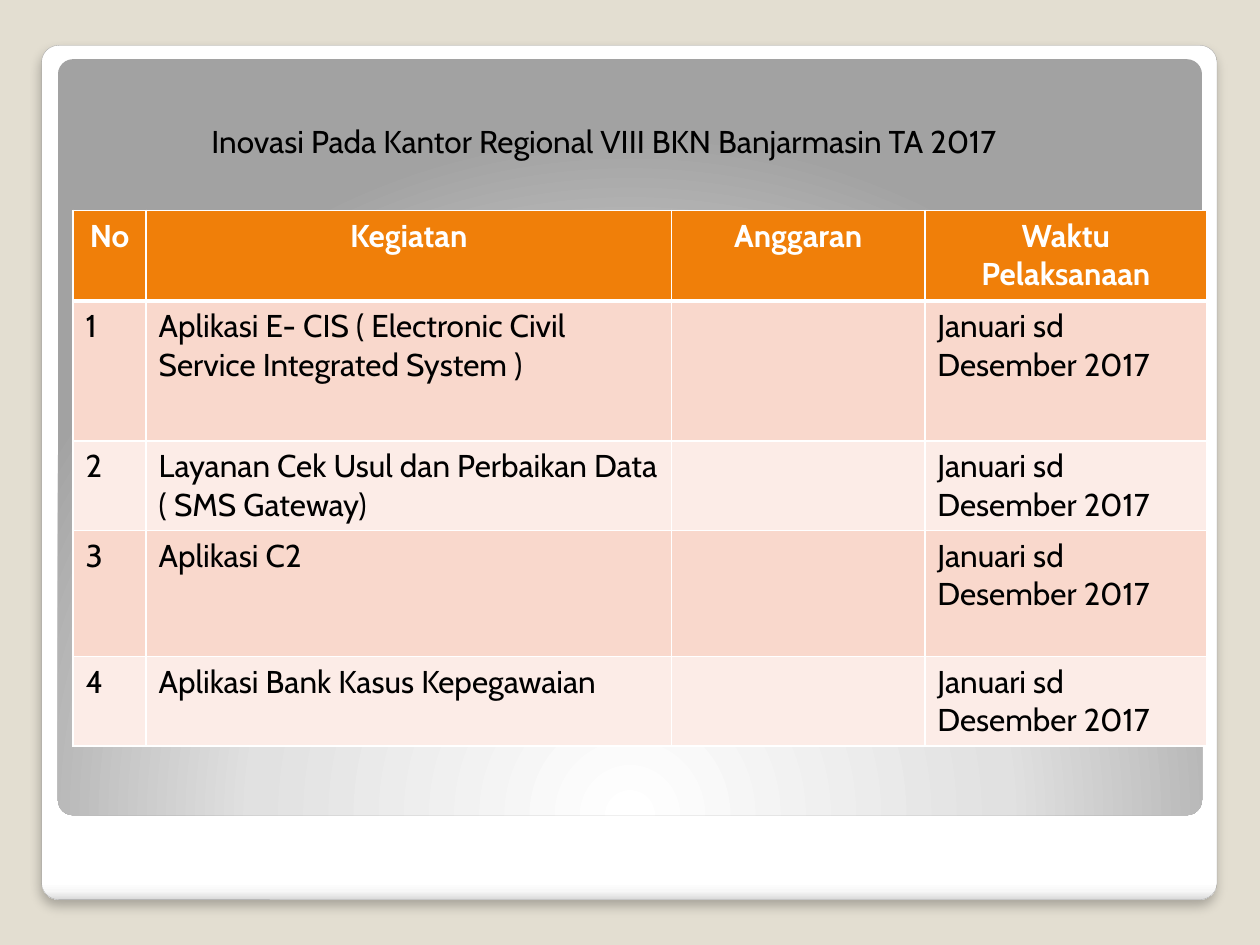
from lxml import etree
from pptx import Presentation
from pptx.dml.color import RGBColor
from pptx.enum.shapes import MSO_SHAPE
from pptx.enum.text import PP_ALIGN
from pptx.oxml import parse_xml
from pptx.oxml.ns import nsdecls, qn
from pptx.util import Inches, Pt

ROUNDED = MSO_SHAPE.ROUNDED_RECTANGLE
CENTER, LEFT = PP_ALIGN.CENTER, PP_ALIGN.LEFT

BACKDROP = RGBColor(0xE3, 0xDE, 0xD1)
FRAME_LINE = RGBColor(0xA4, 0xA4, 0xA4)
ORANGE = RGBColor(0xF0, 0x7F, 0x09)
BANDS = RGBColor(0xF9, 0xD8, 0xCC), RGBColor(0xFC, 0xEC, 0xE7)
WHITE = RGBColor(0xFF, 0xFF, 0xFF)
BLACK = RGBColor(0, 0, 0)
FONT = "Cabin"
TEXT_SIZE = Pt(18)

FRAME_STOPS = [(0, "FFFFFF"), (98, "FFFFFF"), (99, "F7F7F7"), (100, "DADADA")]
FRAME_SHADE = '<a:lin ang="5400000" scaled="0"/>'
PANEL_STOPS = [(0, "FFFFFF"), (55, "E1E1E1"), (100, "A2A2A2")]
PANEL_SHADE = ('<a:path path="circle">'
               '<a:fillToRect l="50000" t="175000" r="50000" b="-75000"/></a:path>')

HEADINGS = ["No", "Kegiatan", "Anggaran", "Waktu Pelaksanaan"]
ACTIVITIES = [
    "Aplikasi E- CIS ( Electronic Civil Service Integrated System )",
    "Layanan Cek Usul dan Perbaikan Data ( SMS Gateway)",
    "Aplikasi C2",
    "Aplikasi Bank Kasus Kepegawaian",
]
PERIOD = "Januari sd Desember 2017"
COLUMN_WIDTHS = [0.58, 4.17, 2.01, 2.24]
ROW_HEIGHTS = [0.72, 1.11, 0.71, 1.0, 0.71]


def style_text(paragraph, color, bold=False, align=LEFT):
    paragraph.alignment = align
    font = paragraph.font
    font.name, font.size, font.bold = FONT, TEXT_SIZE, bold
    font.color.rgb = color


def add_rounded_panel(slide, box, stops, shade):
    panel = slide.shapes.add_shape(ROUNDED, *map(Inches, box))
    panel.adjustments[0] = 0.02
    panel.shadow.inherit = False
    panel.line.fill.background()
    stop_xml = "".join(
        f'<a:gs pos="{position * 1000}"><a:srgbClr val="{color}"/></a:gs>'
        for position, color in stops)
    gradient = parse_xml(f'<a:gradFill {nsdecls("a")} rotWithShape="1">'
                         f'<a:gsLst>{stop_xml}</a:gsLst>{shade}</a:gradFill>')
    panel._element.spPr.find(qn("a:prstGeom")).addnext(gradient)
    return panel


def add_frame(slide, box):
    frame = add_rounded_panel(slide, box, FRAME_STOPS, FRAME_SHADE)
    frame.line.color.rgb = FRAME_LINE
    frame.line.width = Pt(0.16)
    # Soft shadow below the frame
    effects = frame._element.spPr.find(qn("a:effectLst"))
    effects.append(parse_xml(
        f'<a:outerShdw {nsdecls("a")} blurRad="{Pt(6)}" dist="{Pt(4)}" '
        'dir="5400000" algn="tl" rotWithShape="0">'
        '<a:srgbClr val="000000"><a:alpha val="25000"/></a:srgbClr></a:outerShdw>'))


def add_title(slide, box):
    title = slide.shapes.add_textbox(*map(Inches, box)).text_frame
    title.word_wrap = True
    title.text = "Inovasi Pada Kantor Regional VIII BKN Banjarmasin TA 2017"
    style_text(title.paragraphs[0], BLACK)


def set_borders(cell, top, bottom):
    properties = cell._tc.get_or_add_tcPr()
    for index, (side, width) in enumerate(zip("LRTB", (1, 1, top, bottom))):
        border = etree.Element(qn(f"a:ln{side}"), w=str(Pt(width)))
        fill = etree.SubElement(border, qn("a:solidFill"))
        etree.SubElement(fill, qn("a:srgbClr"), val=str(WHITE))
        properties.insert(index, border)


def add_activity_table(slide, box):
    rows = [HEADINGS] + [[str(number), activity, "", PERIOD]
                         for number, activity in enumerate(ACTIVITIES, 1)]
    table = slide.shapes.add_table(
        len(rows), len(HEADINGS), *map(Inches, box)).table
    for column, width in zip(table.columns, COLUMN_WIDTHS):
        column.width = Inches(width)
    for row, height in zip(table.rows, ROW_HEIGHTS):
        row.height = Inches(height)

    for r, values in enumerate(rows):
        header = r == 0
        for c, value in enumerate(values):
            cell = table.cell(r, c)
            cell.text = value
            cell.fill.solid()
            cell.fill.fore_color.rgb = ORANGE if header else BANDS[(r - 1) % 2]
            style_text(cell.text_frame.paragraphs[0],
                       WHITE if header else BLACK, header,
                       CENTER if header else LEFT)
            # A thicker rule parts the header from the body
            set_borders(cell, top=3 if r == 1 else 1, bottom=3 if header else 1)


def main():
    prs = Presentation()
    prs.slide_width, prs.slide_height = Inches(10), Inches(7.5)
    slide = prs.slides.add_slide(prs.slide_layouts[6])
    slide.background.fill.solid()
    slide.background.fill.fore_color.rgb = BACKDROP

    add_frame(slide, (0.33, 0.36, 9.33, 6.78))
    add_rounded_panel(slide, (0.46, 0.47, 9.08, 6), PANEL_STOPS, PANEL_SHADE)
    add_activity_table(slide, (0.58, 1.67, sum(COLUMN_WIDTHS), sum(ROW_HEIGHTS)))
    add_title(slide, (1.58, 0.92, 7, 0.4))
    prs.save("out.pptx")


if __name__ == "__main__":
    main()
